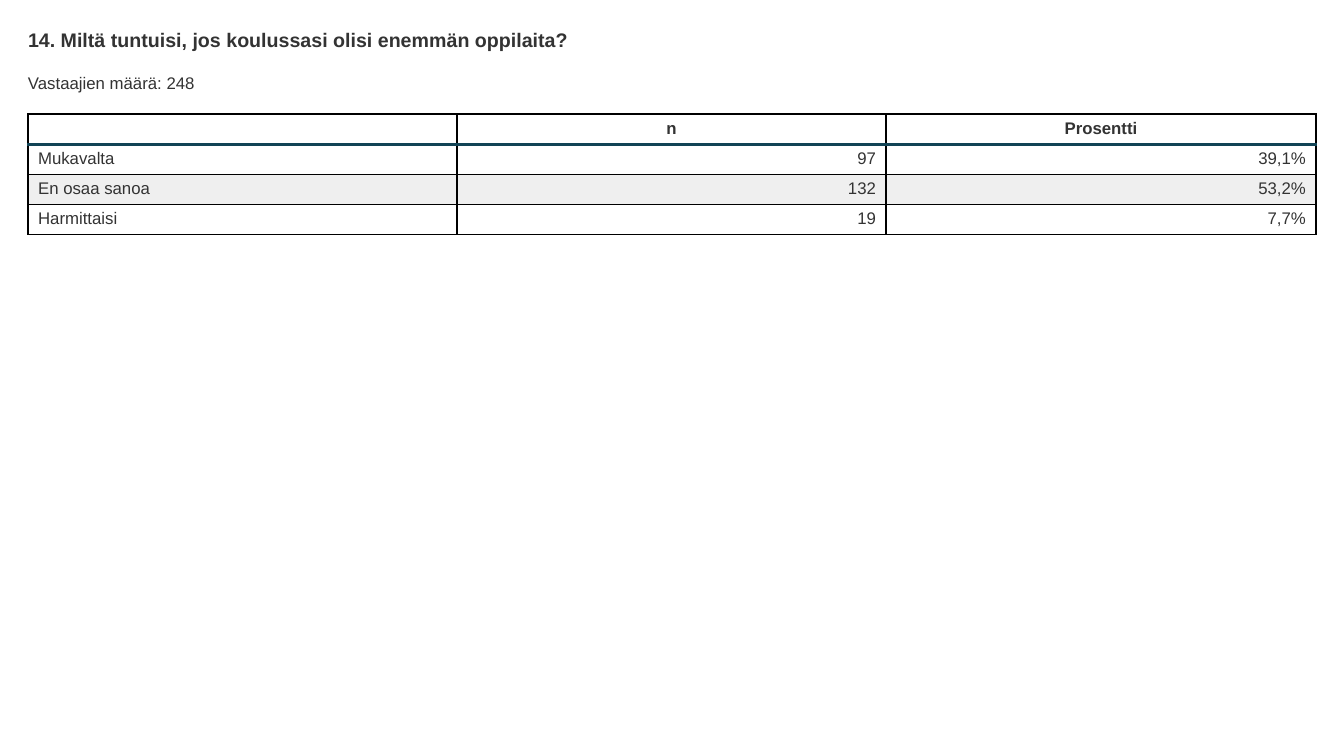
"""Build the survey result slide for question 14."""
import lxml.etree
import pptx
import pptx.dml.color
import pptx.enum.text
import pptx.oxml.ns
import pptx.util

COLORS = {"text": "333333", "grid": "000000", "header_rule": "124456",
          "band": "EFEFEF", "plain": "FFFFFF"}
ALIGN = pptx.enum.text.PP_ALIGN
ANCHOR = pptx.enum.text.MSO_ANCHOR
PX = 914400 / 100.8
LEFT, WIDTH, ROW_HEIGHT = 28, 1288, 30


def px(n):
    return pptx.util.Emu(round(n * PX))


def write(tf, text, size=12, bold=False, align=ALIGN.LEFT, margin=None):
    if margin is not None:
        tf.margin_left = tf.margin_top = tf.margin_right = tf.margin_bottom = px(margin)
        tf.word_wrap = True
        tf.auto_size = pptx.enum.text.MSO_AUTO_SIZE.NONE
        tf.vertical_anchor = ANCHOR.TOP
    p = tf.paragraphs[0]
    p.alignment = align
    if not text:
        end = lxml.etree.SubElement(p._p, pptx.oxml.ns.qn("a:endParaRPr"))
        end.set("sz", str(size * 100))
        return
    r = p.add_run()
    r.text = text
    r.font.name = "Arial"
    r.font.size = pptx.util.Pt(size)
    r.font.bold = bold
    r.font.color.rgb = pptx.dml.color.RGBColor.from_string(COLORS["text"])


prs = pptx.Presentation()
prs.slide_width, prs.slide_height = px(1344), px(756)
s = prs.slides.add_slide(prs.slide_layouts[5])

title = s.shapes.title
title.left, title.top, title.width, title.height = px(LEFT), px(28), px(WIDTH), px(23)
write(title.text_frame, "14. Miltä tuntuisi, jos koulussasi olisi enemmän oppilaita?",
      size=14, bold=True, margin=0)

sp = s.shapes.add_textbox(px(LEFT), px(73), px(WIDTH), px(20))
write(sp.text_frame, "Vastaajien määrä: 248", margin=0)

rows = [
    ["", "n", "Prosentti"],
    ["Mukavalta", "97", "39,1%"],
    ["En osaa sanoa", "132", "53,2%"],
    ["Harmittaisi", "19", "7,7%"],
]
table = s.shapes.add_table(len(rows), 3, px(LEFT), px(114), px(WIDTH),
                           px(ROW_HEIGHT * len(rows))).table
for column, width in zip(table.columns, [429, 429, 430]):
    column.width = px(width)

for i, row in enumerate(rows):
    table.rows[i].height = px(ROW_HEIGHT)
    for j, text in enumerate(row):
        cell = table.cell(i, j)
        if i == 0:
            align = ALIGN.CENTER
        else:
            align = ALIGN.RIGHT if j else ALIGN.LEFT
        write(cell.text_frame, text, bold=i == 0, align=align)
        tcPr = cell._tc.get_or_add_tcPr()
        for side in ["L", "R", "T", "B"]:
            under_header = (i, side) in [(0, "B"), (1, "T")]
            color = COLORS["header_rule" if under_header else "grid"]
            ln = lxml.etree.SubElement(tcPr, pptx.oxml.ns.qn("a:ln" + side))
            ln.set("w", str(pptx.util.Pt(2 if under_header else 1)))
            fill = lxml.etree.SubElement(ln, pptx.oxml.ns.qn("a:solidFill"))
            lxml.etree.SubElement(fill, pptx.oxml.ns.qn("a:srgbClr")).set("val", color)
        cell.fill.solid()
        cell.fill.fore_color.rgb = pptx.dml.color.RGBColor.from_string(
            COLORS["band" if i == 2 else "plain"])

prs.save("out.pptx")
